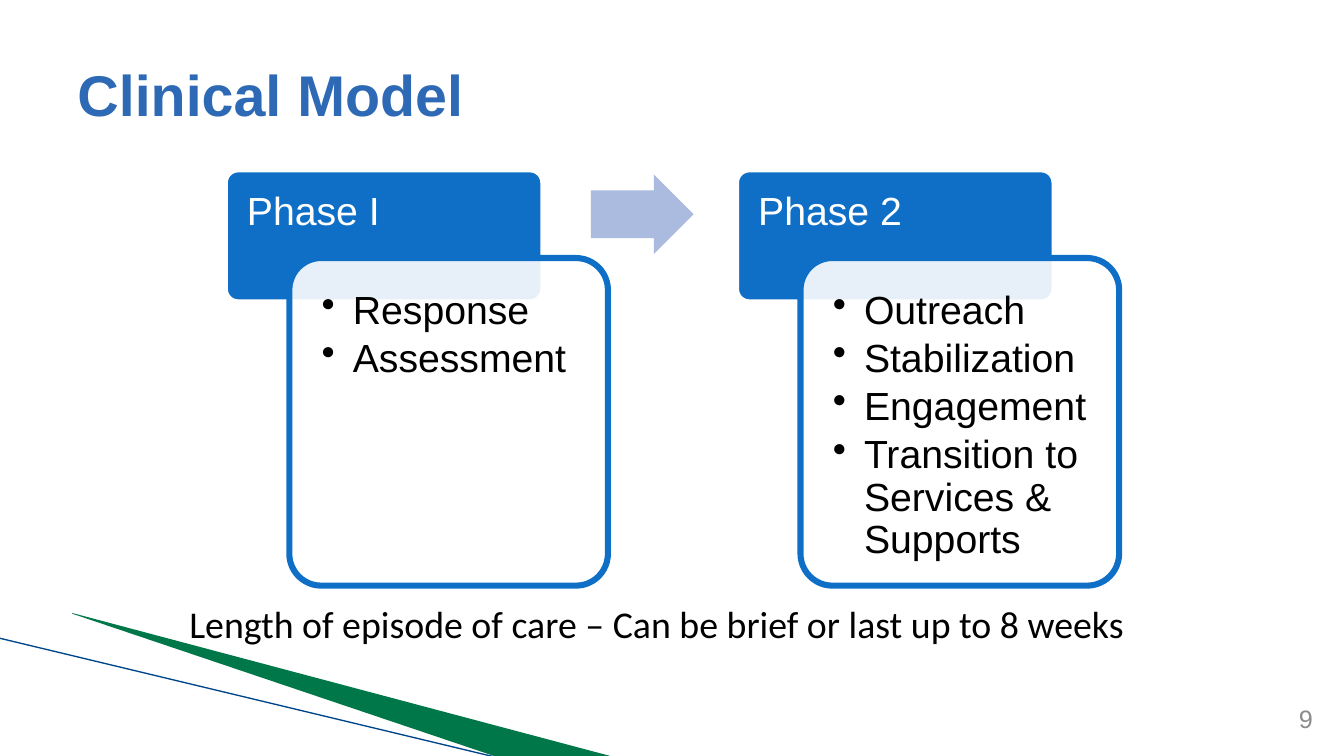
from pptx import Presentation
from pptx.dml.color import RGBColor
from pptx.enum.shapes import MSO_CONNECTOR, MSO_SHAPE
from pptx.enum.text import MSO_ANCHOR, PP_ALIGN
from pptx.oxml.ns import qn
from pptx.util import Inches, Pt
from lxml import etree

BLUE = "0F6FC6"
PHASES = [
    (2.23, "Phase I", ["Response", "Assessment"]),
    (7.3, "Phase 2", ["Outreach", "Stabilization", "Engagement",
                      "Transition to Services & Supports"]),
]


def rgb(color):
    return RGBColor.from_string(color)


def add_shape(s, kind, box, fill, line=None, adj=(), alpha=None):
    sp = s.shapes.add_shape(kind, *map(Inches, box))
    sp.shadow.inherit = False
    for i, value in enumerate(adj):
        sp.adjustments[i] = value
    sp.fill.solid()
    sp.fill.fore_color.rgb = rgb(fill)
    if alpha is not None:
        clr = sp.fill._xPr.find(qn("a:solidFill"))[0]
        etree.SubElement(clr, qn("a:alpha"), val=str(alpha * 1000))
    if line:
        sp.line.color.rgb = rgb(line)
        sp.line.width = Pt(4.33)
    else:
        sp.line.fill.background()
    return sp


def add_text(s, box, lines, size, color, font="Arial", bold=False,
             inset=(0.1, 0.05, 0.1, 0.05), anchor=MSO_ANCHOR.TOP,
             align=PP_ALIGN.LEFT, spacing=None, after=0, bullets=False):
    tf = s.shapes.add_textbox(*map(Inches, box)).text_frame
    tf.word_wrap = True
    tf.vertical_anchor = anchor
    tf.margin_left, tf.margin_top, tf.margin_right, tf.margin_bottom = map(Inches, inset)
    for i, line in enumerate(lines):
        p = tf.add_paragraph() if i else tf.paragraphs[0]
        p.alignment = align
        p.space_after = Pt(after)
        if spacing:
            p.line_spacing = spacing
        if bullets:
            pPr = p._p.get_or_add_pPr()
            pPr.set("marL", str(Inches(0.31)))
            pPr.set("indent", str(-Inches(0.31)))
            etree.SubElement(pPr, qn("a:buChar"), char="•")
        r = p.add_run()
        r.text = line
        r.font.name, r.font.size, r.font.bold = font, Pt(size), bold
        r.font.color.rgb = rgb(color)


def add_decoration(s):
    # Green wedge
    fb = s.shapes.build_freeform(Inches(0.71), Inches(6.08))
    fb.add_line_segments([(Inches(x), Inches(y)) for x, y in
                          [(6.09, 7.51), (4.96, 7.52), (0.72, 6.09)]])
    sp = fb.convert_to_shape()
    sp.shadow.inherit = False
    sp.fill.solid()
    sp.fill.fore_color.rgb = rgb("007749")
    sp.line.fill.background()
    # Thin diagonal
    cx = s.shapes.add_connector(MSO_CONNECTOR.STRAIGHT, Inches(-0.01), Inches(6.33),
                                Inches(4.95), Inches(7.52))
    cx.line.color.rgb = rgb("00468B")
    cx.line.width = Pt(0.95)
    etree.SubElement(cx._element.spPr, qn("a:effectLst"))


def add_phase(s, x, name, items):
    # Header block
    add_shape(s, MSO_SHAPE.ROUNDED_RECTANGLE, (x, 1.68, 3.16, 1.32), BLUE, "FFFFFF", [0.1])
    add_text(s, (x, 1.68, 3.16, 0.88), [name], 28, "FFFFFF",
             inset=(0.22, 0.22, 0.22, 0.12), spacing=0.9)
    # Overlapping card with the items
    add_shape(s, MSO_SHAPE.ROUNDED_RECTANGLE, (x + 0.64, 2.56, 3.16, 3.25),
              "FFFFFF", BLUE, [0.1], alpha=90)
    add_text(s, (x + 0.74, 2.66, 2.97, 3.07), items, 28, "000000",
             inset=(0.22,) * 4, spacing=0.9, after=4.2, bullets=True)


def main():
    prs = Presentation()
    prs.slide_width, prs.slide_height = Inches(13.33), Inches(7.5)
    s = prs.slides.add_slide(prs.slide_layouts[6])
    add_decoration(s)

    # Title, footnote and page number
    add_text(s, (0.67, 0.3, 12, 1.25), ["Clinical Model"], 41, "2D69B5",
             bold=True, anchor=MSO_ANCHOR.MIDDLE)
    add_text(s, (1.78, 5.91, 10.5, 0.56),
             ["Length of episode of care – Can be brief or last up to 8 weeks"],
             27, "000000", font="Calibri")
    add_text(s, (12.56, 6.92, 0.56, 0.41), ["9"], 18, "8C8C8C",
             anchor=MSO_ANCHOR.MIDDLE, align=PP_ALIGN.RIGHT)

    # Phases joined by an arrow
    for x, name, items in PHASES:
        add_phase(s, x, name, items)
    add_shape(s, MSO_SHAPE.RIGHT_ARROW, (5.86, 1.73, 1.02, 0.79), "ABBBDF", adj=[0.6, 0.5])

    prs.save("out.pptx")


if __name__ == "__main__":
    main()
